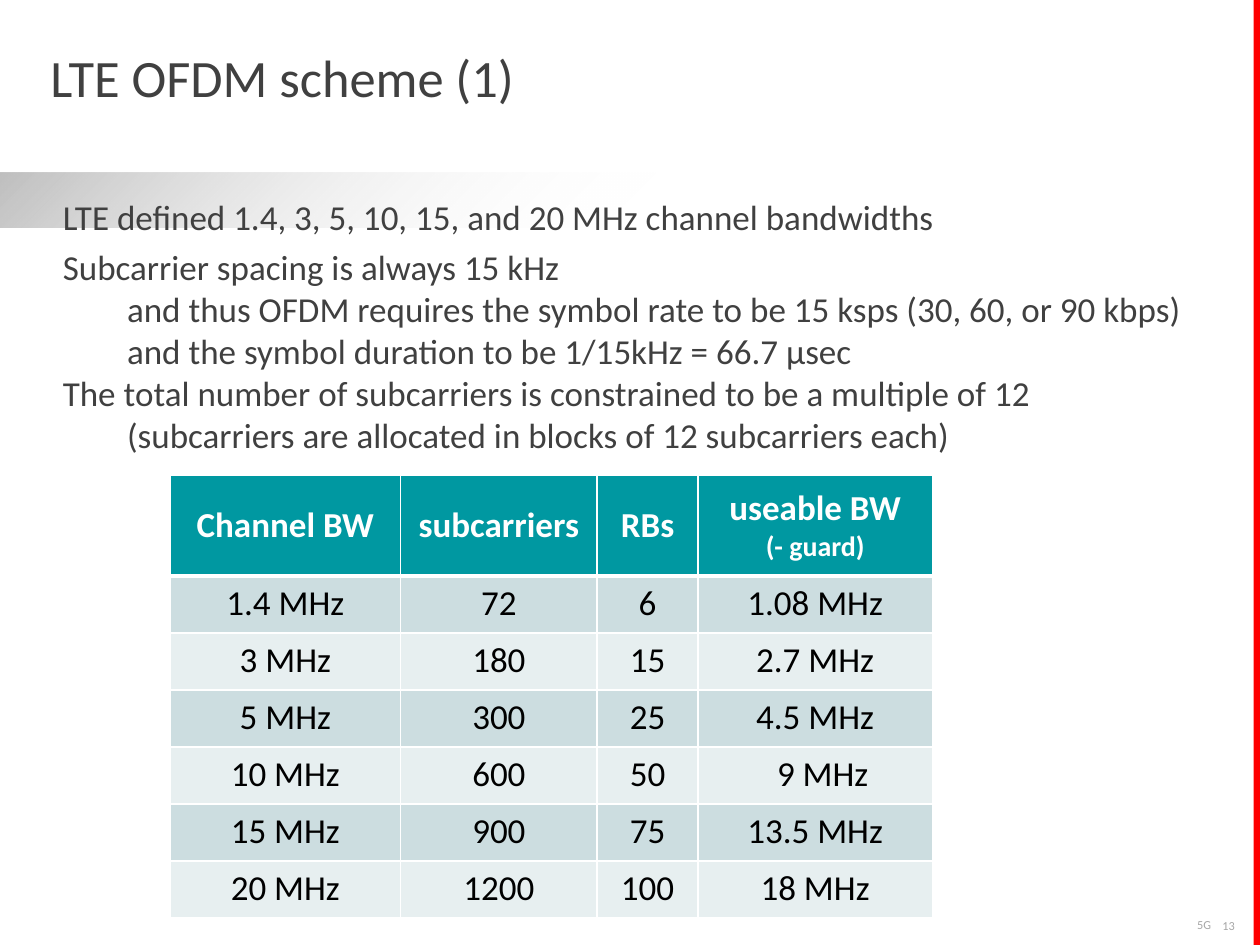
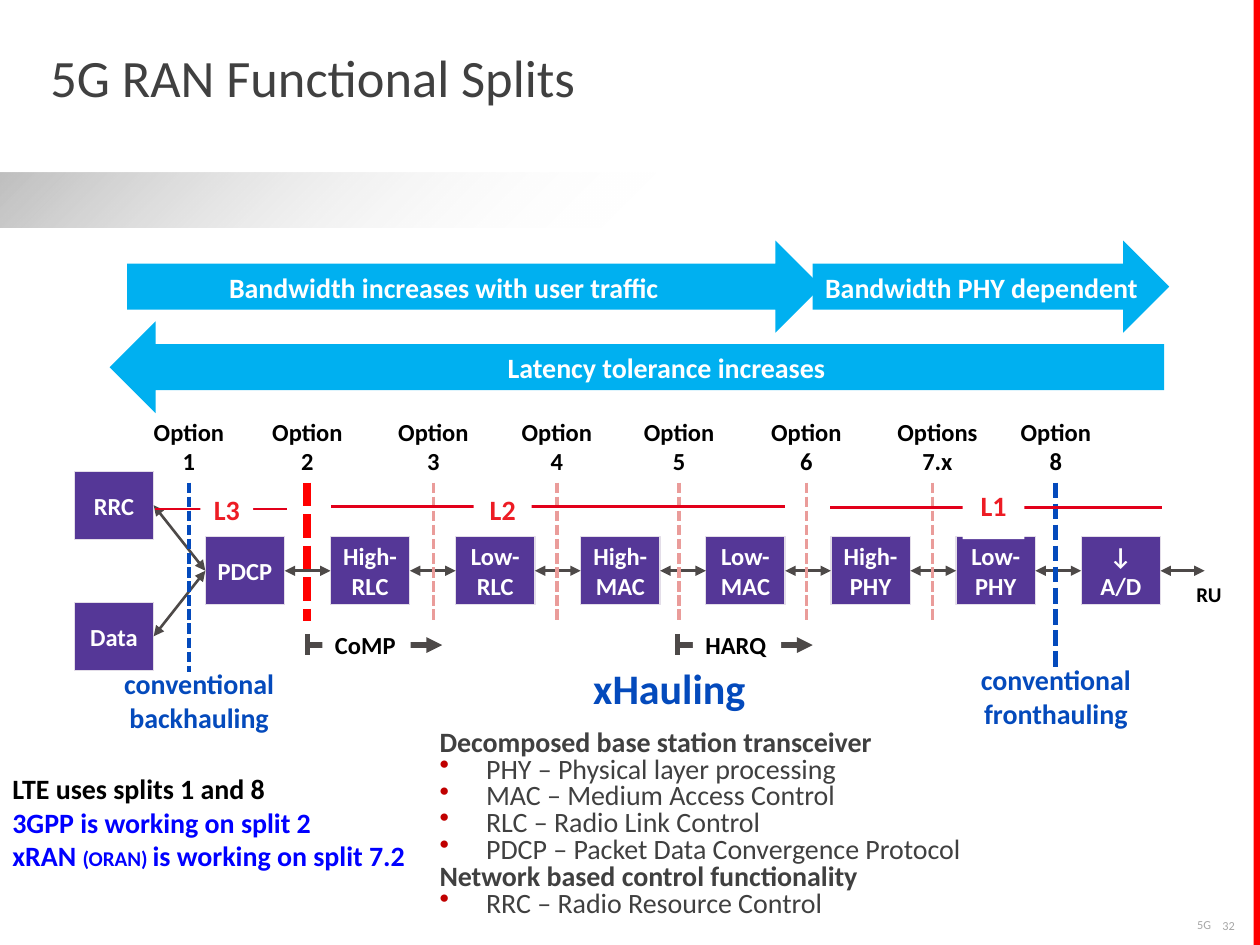
from collections import namedtuple

from lxml import etree
from pptx import Presentation
from pptx.dml.color import RGBColor
from pptx.enum.dml import MSO_LINE
from pptx.enum.shapes import MSO_CONNECTOR, MSO_SHAPE
from pptx.enum.text import MSO_ANCHOR, PP_ALIGN
from pptx.oxml.ns import qn
from pptx.util import Inches, Pt

# The slide is a grid of 100 columns by 75 rows; every length counts cells.
COLS, ROWS = 100, 75
CELL = Inches(10) / COLS
FONT = "Calibri"
WHITE, BLACK, TEXT, MUTED = "FFFFFF", "000000", "404040", "A6A6A6"
STRIPE, BAND, TEAL = "FF0000", "BFBFBF", "0098A1"
ROW_FILLS = ("CCDDE0", "E7EFF0")
SKY, PURPLE, PURPLE_EDGE, GREY = "00B0F0", "553797", "E3DDE8", "4D4948"
NAVY, PINK, BLUE, BULLET = "044ABC", "EA9C9A", "0000FF", "C00000"
LAYER_LINE, LAYER_TEXT = "E2001A", "ED1C24"
LEFT, CENTER, RIGHT = PP_ALIGN.LEFT, PP_ALIGN.CENTER, PP_ALIGN.RIGHT
MIDDLE, TOP = MSO_ANCHOR.MIDDLE, MSO_ANCHOR.TOP


class Box(namedtuple("Box", "x y w h")):
    def sub(self, dx, dy, w, h):
        return Box(self.x + dx, self.y + dy, w, h)

    def emu(self):
        return [cells(v) for v in self]


def cells(n):
    return round(n * CELL)


def rgb(color):
    return RGBColor.from_string(color)


def add_para(tf, runs, size, color, bold=False, align=LEFT, before=0,
             spacing=None, indent=0, bullet=False):
    """Runs are a string, or a list of (text, size) pairs."""
    p = tf.paragraphs[0]
    if p.runs:
        p = tf.add_paragraph()
    p.alignment, p.space_before = align, Pt(before)
    if spacing:
        p.line_spacing = spacing
    pPr = p._p.get_or_add_pPr()
    if indent:
        pPr.set("marL", str(cells(indent)))
    if bullet:
        pPr.set("indent", str(-cells(indent)))
        clr = etree.SubElement(pPr, qn("a:buClr"))
        etree.SubElement(clr, qn("a:srgbClr"), val=BULLET)
        etree.SubElement(pPr, qn("a:buChar"), char="•")
    for text, run_size in [(runs, size)] if isinstance(runs, str) else runs:
        r = p.add_run()
        r.text = text
        r.font.name, r.font.size, r.font.bold = FONT, Pt(run_size), bold
        r.font.color.rgb = rgb(color)


def set_frame(tf, wrap=True, anchor=TOP, side=1, edge=0.5):
    tf.word_wrap, tf.vertical_anchor = wrap, anchor
    tf.margin_left = tf.margin_right = cells(side)
    tf.margin_top = tf.margin_bottom = cells(edge)


def add_text(s, box, lines=(), size=16, color=BLACK, bold=True, align=LEFT,
             spacing=None, **frame):
    tf = s.shapes.add_textbox(*box.emu()).text_frame
    set_frame(tf, **frame)
    for line in lines:
        add_para(tf, line, size, color, bold, align, spacing=spacing)
    return tf


def add_shape(s, box, fill, kind=MSO_SHAPE.RECTANGLE, edge=None):
    sp = s.shapes.add_shape(kind, *box.emu())
    sp.shadow.inherit = False
    sp.fill.solid()
    sp.fill.fore_color.rgb = rgb(fill)
    if edge:
        sp.line.color.rgb, sp.line.width = rgb(edge), Pt(0.75)
    else:
        sp.line.fill.background()
    return sp


def add_line(s, start, end, color, width, dash=None, heads=()):
    """Heads names the arrow ends: "headEnd" at start, "tailEnd" at end."""
    points = [cells(v) for v in (*start, *end)]
    c = s.shapes.add_connector(MSO_CONNECTOR.STRAIGHT, *points)
    c.line.color.rgb, c.line.width = rgb(color), Pt(width)
    if dash:
        c.line.dash_style = dash
    spPr = c.element.spPr
    for head in heads:
        etree.SubElement(spPr.find(qn("a:ln")), qn("a:" + head), type="triangle")
    etree.SubElement(spPr, qn("a:effectLst"))
    return c


def link(s, a, b):
    """Double arrow from the right side of a to the left side of b."""
    c = add_line(s, (0, 0), (1, 1), GREY, 1.5, heads=("headEnd", "tailEnd"))
    c.begin_connect(a, 3)
    c.end_connect(b, 1)


def new_slide(prs, title, number):
    s = prs.slides.add_slide(prs.slide_layouts[6])
    band = add_shape(s, Box(0, 13.7, COLS, 4.4), BAND)
    band.fill.gradient()
    band.fill.gradient_angle = 315
    for stop, color, position in zip(band.fill.gradient_stops,
                                     (BAND, WHITE), (0, 0.5)):
        stop.color.rgb, stop.position = rgb(color), position
    clear = band.element.spPr.findall(".//" + qn("a:srgbClr"))[-1]
    etree.SubElement(clear, qn("a:alpha"), val="0")
    add_shape(s, Box(COLS - 0.5, 0, 0.5, ROWS), STRIPE)
    add_text(s, Box(95.9, 72.4, 3.2, 2.2), [number], 7, MUTED, False, CENTER)
    add_text(s, Box(71, 72.3, 26.1, 2.2), ["5G"], 7, MUTED, False, RIGHT)
    add_text(s, Box(4, 2.2, 75.7, 8.6), [title], 30, TEXT, False,
             spacing=0.85, anchor=MIDDLE, side=0, edge=0)
    return s


def scheme_text(s, box):
    tf = add_text(s, box)
    for text, before, indent in (
            ("LTE defined 1.4, 3, 5, 10, 15, and 20 MHz channel bandwidths", 4.5, 0),
            ("Subcarrier spacing is always 15 kHz", 4.5, 0),
            ("and thus OFDM requires the symbol rate to be 15 ksps (30, 60, or 90 kbps)", 0, 5.1),
            ("and the symbol duration to be 1/15kHz = 66.7 μsec", 0, 5.1),
            ("The total number of subcarriers is constrained to be a multiple of 12", 0, 0),
            ("(subcarriers are allocated in blocks of 12 subcarriers each)", 0, 5.1)):
        add_para(tf, text, 20, TEXT, before=before, indent=indent)


def fill_cell(cell, fill, bottom):
    tcPr = cell._tc.get_or_add_tcPr()
    for side, width in (("L", 1), ("R", 1), ("T", 1), ("B", bottom)):
        ln = etree.SubElement(tcPr, qn("a:ln" + side), w=str(Pt(width)))
        solid = etree.SubElement(ln, qn("a:solidFill"))
        etree.SubElement(solid, qn("a:srgbClr"), val=WHITE)
    cell.fill.solid()
    cell.fill.fore_color.rgb = rgb(fill)


def bandwidth_table(s, box):
    header = (["Channel BW"], ["subcarriers"], ["RBs"],
              ["useable BW", [("(- guard)", 16)]])
    rows = (("1.4 MHz", "72", "6", "1.08 MHz"),
            ("3 MHz", "180", "15", "2.7 MHz"),
            ("5 MHz", "300", "25", "4.5 MHz"),
            ("10 MHz", "600", "50", "9 MHz"),
            ("15 MHz", "900", "75", "13.5 MHz"),
            ("20 MHz", "1200", "100", "18 MHz"))
    table = s.shapes.add_table(len(rows) + 1, len(header), *box.emu()).table
    table.first_row = table.horz_banding = False
    for col, width in zip(table.columns, (18.3, 15.6, 8, 18.6)):
        col.width = cells(width)
    for i, row in enumerate(table.rows):
        row.height = cells(4.53 if i else 8)
    for c, lines in enumerate(header):
        cell = table.cell(0, c)
        cell.vertical_anchor = MIDDLE
        fill_cell(cell, TEAL, 3)
        for line in lines:
            add_para(cell.text_frame, line, 20, WHITE, True, CENTER)
    for i, row in enumerate(rows):
        for c, value in enumerate(row):
            cell = table.cell(i + 1, c)
            fill_cell(cell, ROW_FILLS[i % 2], 1)
            add_para(cell.text_frame, value, 20, BLACK, align=CENTER)
    table.cell(4, 3).margin_left = cells(2.2)  # lines 9 up with two-digit values


def trend_arrows(s, box):
    right, left = MSO_SHAPE.RIGHT_ARROW, MSO_SHAPE.LEFT_ARROW
    for kind, x, y, w, text_x, text_w, text in (
            (right, 55.8, 0, 28.3, 55.8, 27.1, "Bandwidth PHY dependent"),
            (left, 0, 6.4, 83.7, 30.6, 27.5, "Latency tolerance increases"),
            (right, 1.4, 0, 55.1, 8.5, 36.6, "Bandwidth increases with user traffic")):
        add_shape(s, box.sub(x, y, w, 7.3), SKY, kind)
        add_text(s, box.sub(text_x, y + 1.85, text_w, 3.7), [text],
                 color=WHITE, wrap=False)


def function_block(s, box, lines):
    sp = add_shape(s, box, PURPLE, edge=PURPLE_EDGE)
    set_frame(sp.text_frame, anchor=MIDDLE, side=0.5)
    for line in lines:
        add_para(sp.text_frame, line, 14, WHITE, True, CENTER)
    return sp


def function_chain(s, box):
    pitch, w, h = 9.93, 6.3, 5.4
    names = (["PDCP"], ["High-", "RLC"], ["Low-RLC"], ["High-", "MAC"],
             ["Low-", "MAC"], ["High-", "PHY"], ["Low-", "PHY"], ["↓", "A/D"])
    blocks = [function_block(s, box.sub(10.4 + i * pitch, 5.2, w, h), lines)
              for i, lines in enumerate(names)]
    for y, name in ((0, "RRC"), (10.4, "Data")):
        link(s, function_block(s, box.sub(0, y, w, h), [name]), blocks[0])
    for a, b in zip(blocks, blocks[1:]):
        link(s, a, b)
    y = box.y + 5.2 + h / 2
    out = add_line(s, (box.x + 86.2, y), (box.x + 89.7, y), GREY, 1.5,
                   heads=("headEnd", "tailEnd"))
    out.begin_connect(blocks[-1], 3)
    add_text(s, box.sub(88, 8.3, 4.1, 3), ["RU"], 12, align=CENTER, wrap=False)


def split_options(s, box):
    for x, lines, w, color, weight, length in (
            (15, ("Option", "1"), 7.7, NAVY, 2, 15),
            (24.4, ("Option", "2"), 7.7, STRIPE, 4.5, 11),
            (34.4, ("Option", "3"), 7.7, PINK, 2, 11),
            (44.2, ("Option", "4"), 7.7, PINK, 2, 11),
            (53.9, ("Option", "5"), 7.7, PINK, 2, 11),
            (64, ("Option", "6"), 7.7, PINK, 2, 11),
            (74, ("Options", "7.x"), 8.5, PINK, 2, 11),
            (83.8, ("Option", "8"), 7.7, NAVY, 3, 15)):
        add_text(s, box.sub(x - 3.85, 0, w, 5.7), lines, 14, align=CENTER,
                 wrap=False)
        x, y = box.x + x, box.y + 5.7
        add_line(s, (x, y), (x, y + length), color, weight,
                 MSO_LINE.SQUARE_DOT)


def layer_spans(s, box):
    for name, start, end, y, label in (
            ("L1", 65.9, 92.2, 2, (76.4, 0, 4.9, 4.5)),
            ("L2", 26.3, 62.3, 1.9, (37.6, 0.3, 4.6, 3.8)),
            ("L3", 12.3, 22.8, 2.1, (15.9, 0.3, 4.2, 3.9))):
        y += box.y
        add_line(s, (box.x + start, y), (box.x + end, y), LAYER_LINE, 1.5)
        tf = add_shape(s, box.sub(*label), WHITE).text_frame
        set_frame(tf, side=0.5)
        add_para(tf, name, 16, LAYER_TEXT, True, CENTER)


def reach_marker(s, box, name):
    """Barred arrow with its name set in a gap."""
    y = box.y + box.h / 2
    add_line(s, (box.x, y), (box.x + box.w, y), GREY, 3, heads=("tailEnd",))
    add_line(s, (box.x, y - 0.9), (box.x, y + 0.8), GREY, 3)
    tf = add_shape(s, box.sub(1.2, 0, 7, box.h), WHITE).text_frame
    set_frame(tf, wrap=False, anchor=MIDDLE)
    add_para(tf, name, 14, BLACK, True)


def hauling_labels(s, box):
    for x, y, kind in ((0, 0.3, "backhauling"), (68, 0, "fronthauling")):
        add_text(s, box.sub(x, y, 14.2, 7.1), ["conventional", kind],
                 color=NAVY, align=CENTER)
    add_text(s, box.sub(37.4, 0.5, 18.1, 4), ["xHauling"], 24, NAVY,
             anchor=MIDDLE)


def glossary(s, box):
    tf = add_text(s, box)
    for heading, entries in (
            ("Decomposed base station transceiver",
             ("PHY – Physical layer processing",
              "MAC – Medium Access Control",
              "RLC – Radio Link Control",
              "PDCP – Packet Data Convergence Protocol")),
            ("Network based control functionality",
             ("RRC – Radio Resource Control",))):
        add_para(tf, heading, 16, TEXT, True, spacing=0.8)
        for entry in entries:
            add_para(tf, entry, 16, TEXT, spacing=0.8, indent=3.7, bullet=True)


def split_usage(s, box):
    tf = add_text(s, box, ["LTE uses splits 1 and 8"], anchor=MIDDLE)
    add_para(tf, "3GPP is working on split 2", 16, BLUE, True)
    add_para(tf, [("xRAN ", 16), ("(ORAN) ", 12),
                  ("is working on split 7.2", 16)], 16, BLUE, True)


def main():
    prs = Presentation()
    prs.slide_width, prs.slide_height = cells(COLS), cells(ROWS)

    s = new_slide(prs, "LTE OFDM scheme (1)", "13")
    scheme_text(s, Box(4, 15, 92.9, 52.1))
    bandwidth_table(s, Box(13.5, 37.7, 60.5, 35.2))

    s = new_slide(prs, "5G RAN Functional Splits", "32")
    function_chain(s, Box(5.9, 37.4, 90, 16))
    split_options(s, Box(0, 32.6, COLS, 20.7))
    trend_arrows(s, Box(8.7, 19.1, 84.1, 13.7))
    layer_spans(s, Box(0, 38.3, COLS, 4.5))
    hauling_labels(s, Box(8.7, 52.1, 82.2, 7.4))
    for x, name in ((24.4, "CoMP"), (53.8, "HARQ")):
        reach_marker(s, Box(x, 49.5, 10.7, 3.4), name)
    glossary(s, Box(33.9, 57.5, 44.7, 15))
    split_usage(s, Box(0, 60.7, 35, 9.1))
    prs.save("out.pptx")


if __name__ == "__main__":
    main()
